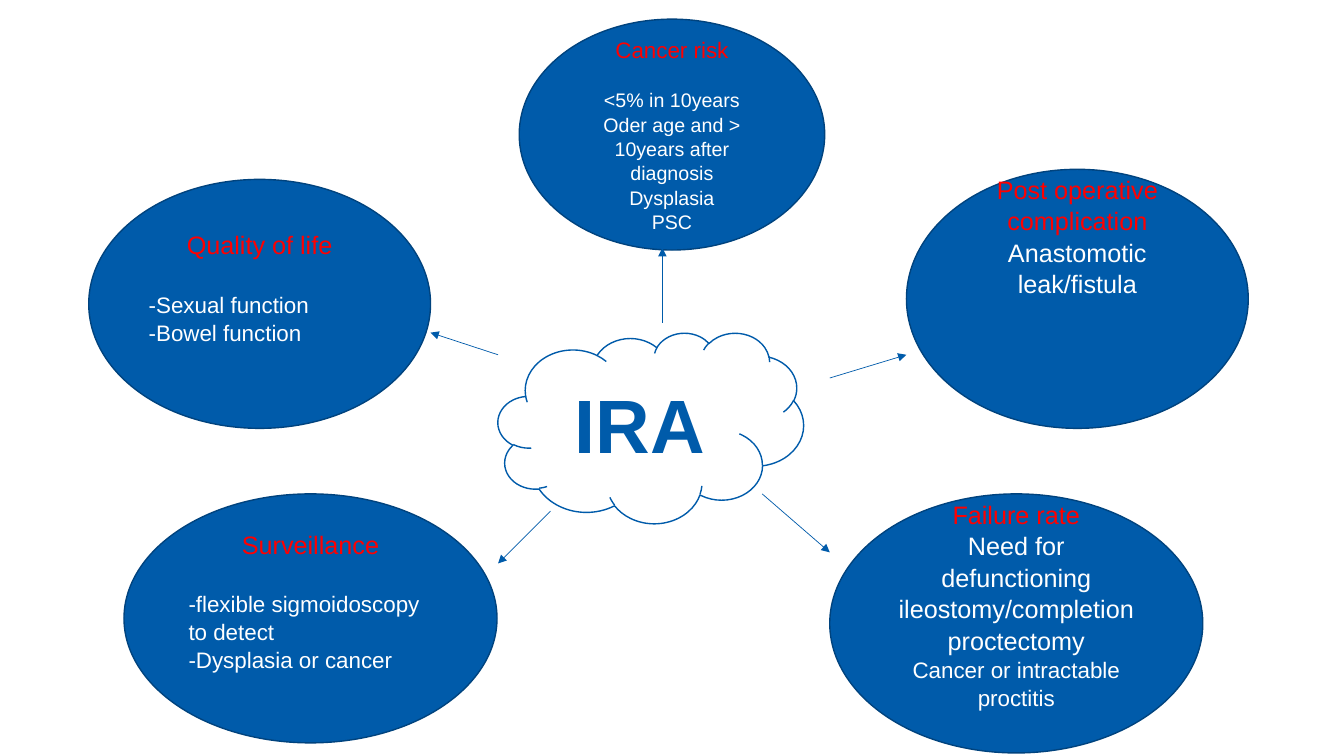
from lxml import etree
from pptx import Presentation
from pptx.dml.color import RGBColor
from pptx.enum.shapes import MSO_CONNECTOR, MSO_SHAPE
from pptx.enum.text import MSO_ANCHOR, PP_ALIGN
from pptx.oxml.ns import qn
from pptx.util import Inches, Pt

BLUE = RGBColor(0x00, 0x5B, 0xAA)
DARK_BLUE = RGBColor(0x00, 0x43, 0x7E)
RED = RGBColor(0xFF, 0x00, 0x00)
WHITE = RGBColor(0xFF, 0xFF, 0xFF)
OVAL, CLOUD = MSO_SHAPE.OVAL, MSO_SHAPE.CLOUD
STRAIGHT = MSO_CONNECTOR.STRAIGHT
MIDDLE, BOTTOM = MSO_ANCHOR.MIDDLE, MSO_ANCHOR.BOTTOM
CENTER, LEFT = PP_ALIGN.CENTER, PP_ALIGN.LEFT
FONT = "Arial"

# box, title size, gap after title, anchor, bottom margin, body alignment, body
TOPICS = [
    ("Quality of life", (0.88, 1.78, 3.39, 2.47), 18, 21.5, BOTTOM, 0.46, LEFT,
     [("-Sexual function", 16), ("-Bowel function", 16)]),
    ("Cancer risk", (5.15, 0.19, 3.03, 2.29), 16, 17, MIDDLE, 0.05, CENTER,
     [("<5% in 10years", 14),
      ("Oder age and > 10years after diagnosis", 14),
      ("Dysplasia", 14), ("PSC", 14)]),
    ("Post operative complication", (8.99, 1.68, 3.39, 2.57), 18, 0, BOTTOM, 0.91,
     CENTER, [("Anastomotic leak/fistula", 18)]),
    ("Surveillance", (1.23, 4.9, 3.7, 2.47), 18, 21.5, BOTTOM, 0.33, LEFT,
     [("-flexible sigmoidoscopy to detect", 16), ("-Dysplasia or cancer", 16)]),
    ("Failure rate", (8.23, 4.9, 3.7, 2.57), 18, 0, BOTTOM, 0.04, CENTER,
     [("Need for defunctioning ileostomy/completion proctectomy", 18),
      ("Cancer or intractable proctitis", 16)]),
]

ARROWS = [
    (4.94, 3.52, 4.27, 3.3),
    (6.57, 3.2, 6.57, 2.46),
    (8.23, 3.75, 8.99, 3.52),
    (5.46, 5.07, 4.94, 5.59),
    (7.56, 4.9, 8.23, 5.48),
]


def add_outline_shape(slide, kind, box, fill, line):
    sp = slide.shapes.add_shape(kind, *map(Inches, box))
    sp.shadow.inherit = False
    sp.fill.solid()
    sp.fill.fore_color.rgb = fill
    sp.line.color.rgb = line
    sp.line.width = Pt(1)
    sp.text_frame.word_wrap = True
    sp.text_frame.vertical_anchor = MIDDLE
    return sp


def add_text(p, text, size, color, align=CENTER, bold=False):
    p.alignment = align
    r = p.add_run()
    r.text = text
    r.font.name = FONT
    r.font.size = Pt(size)
    r.font.bold = bold
    r.font.color.rgb = color


def add_topic(slide, title, box, size, gap, anchor, bottom, align, body):
    tf = add_outline_shape(slide, OVAL, box, BLUE, DARK_BLUE).text_frame
    tf.vertical_anchor = anchor
    tf.margin_bottom = Inches(bottom)
    p = tf.paragraphs[0]
    p.line_spacing = 1.04
    p.space_after = Pt(gap)
    add_text(p, title, size, RED)
    for text, body_size in body:
        p = tf.add_paragraph()
        p.line_spacing = 1.04
        add_text(p, text, body_size, WHITE, align)


def add_arrow(slide, *ends):
    cxn = slide.shapes.add_connector(STRAIGHT, *map(Inches, ends))
    cxn.line.color.rgb = BLUE
    cxn.line.width = Pt(0.5)
    etree.SubElement(cxn.line._get_or_add_ln(), qn("a:tailEnd"), type="triangle")
    etree.SubElement(cxn._element.spPr, qn("a:effectLst"))


def main():
    prs = Presentation()
    prs.slide_width, prs.slide_height = Inches(13.33), Inches(7.5)
    slide = prs.slides.add_slide(prs.slide_layouts[6])
    for topic in TOPICS:
        add_topic(slide, *topic)
    cloud = add_outline_shape(slide, CLOUD, (4.94, 3.3, 3.03, 1.89), WHITE, BLUE)
    add_text(cloud.text_frame.paragraphs[0], "IRA", 54, BLUE, bold=True)
    for ends in ARROWS:
        add_arrow(slide, *ends)
    prs.save("out.pptx")


if __name__ == "__main__":
    main()
